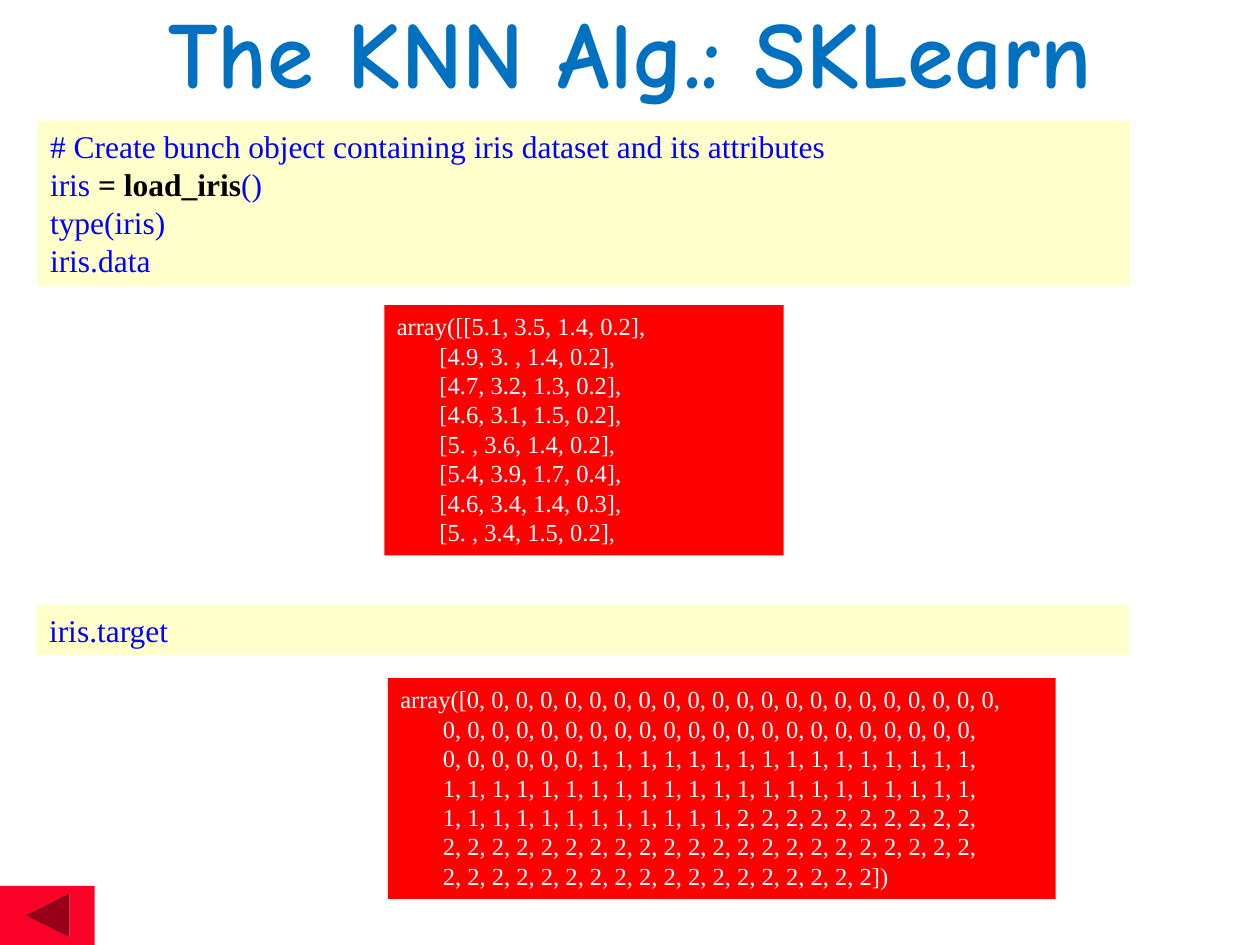
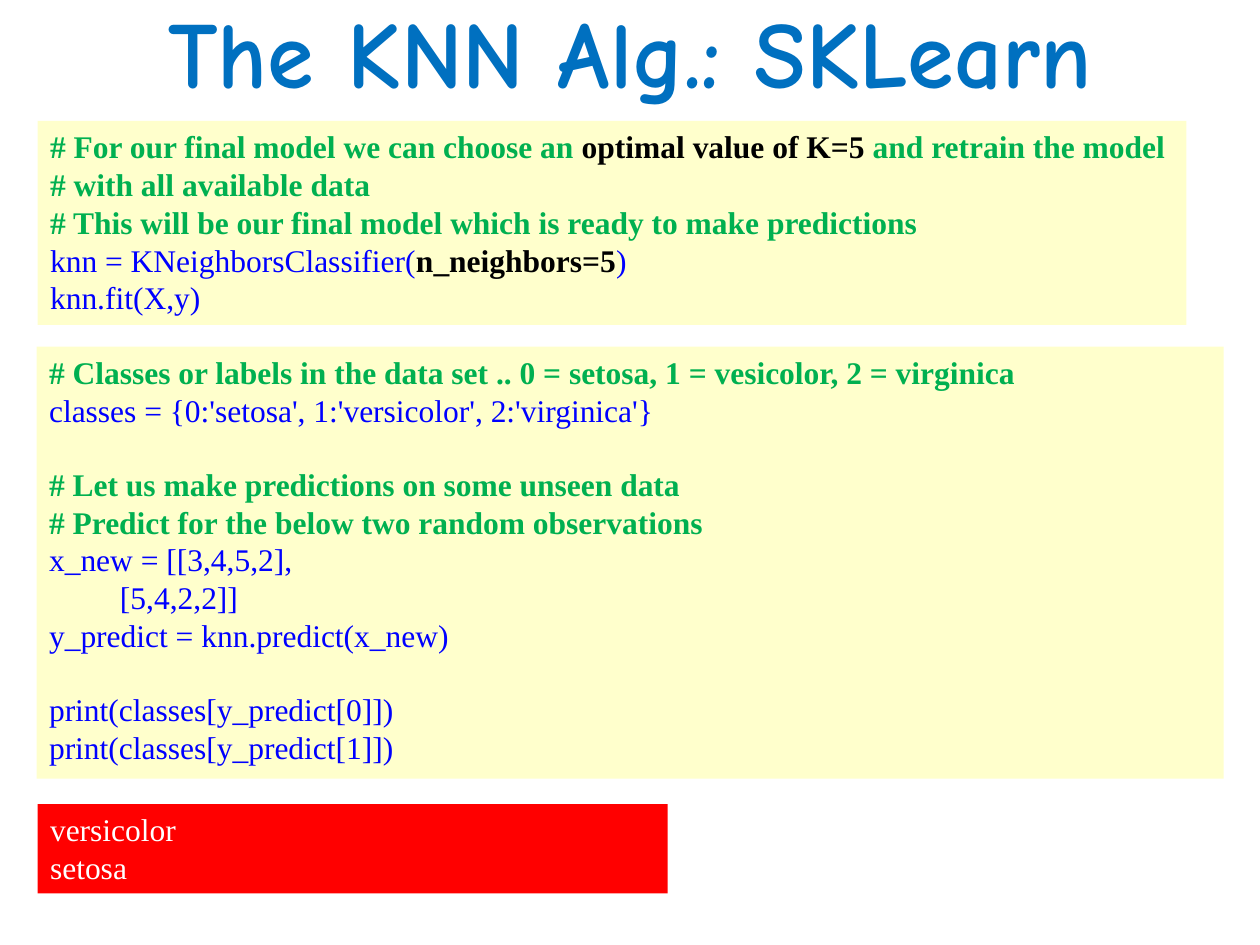
from dataclasses import dataclass
from pptx import Presentation
from pptx.dml.color import RGBColor
from pptx.enum.shapes import MSO_SHAPE as Preset
from pptx.enum.text import MSO_ANCHOR as Anchor, MSO_AUTO_SIZE as AutoSize, PP_ALIGN as Align
from pptx.util import Cm, Pt

TITLE_BLUE = RGBColor(0x00, 0x70, 0xC0)
CODE_BLUE = RGBColor(0x00, 0x00, 0xFF)
COMMENT_GREEN = RGBColor(0x00, 0xB0, 0x50)
BLACK = RGBColor(0x00, 0x00, 0x00)
WHITE = RGBColor(0xFF, 0xFF, 0xFF)
CODE_FILL = RGBColor(0xFF, 0xFF, 0xCC)
OUTPUT_FILL = RGBColor(0xFF, 0x00, 0x00)
BUTTON_RED = RGBColor(0xFC, 0x01, 0x28)

TITLE_FONT = "Comic Neue"
BODY_FONT = "Times New Roman"
TITLE_ONLY = 5
LINE_HEIGHT = 1.15

CODE = (CODE_BLUE, False)
COMMENT = (COMMENT_GREEN, True)
KEY = (BLACK, True)
OUTPUT = (WHITE, False)


@dataclass
class Line:
    segments: list
    indent: float = 0
    after_gap: bool = False


def code(text, **layout):
    return Line([(text, CODE)], **layout)


def comment(text, **layout):
    return Line([(text, COMMENT)], **layout)


def output(rows, indent=0):
    return [Line([(row, OUTPUT)], indent if number else 0) for number, row in enumerate(rows)]


class Deck:
    def __init__(self):
        self.presentation = Presentation()
        self.presentation.slide_width = Cm(25.4)
        self.presentation.slide_height = Cm(19.05)
        self.slide = None

    def start_slide(self, heading):
        layout = self.presentation.slide_layouts[TITLE_ONLY]
        self.slide = self.presentation.slides.add_slide(layout)
        title = self.slide.shapes.title
        title.left, title.top, title.width, title.height = Cm(0), Cm(0), Cm(25.4), Cm(2.06)
        frame = title.text_frame
        frame.text = heading
        frame.auto_size = AutoSize.NONE
        frame.vertical_anchor = Anchor.MIDDLE
        paragraph = frame.paragraphs[0]
        paragraph.alignment = Align.CENTER
        self.set_font(paragraph.font, TITLE_FONT, 54)
        self.set_style(paragraph.font, (TITLE_BLUE, True))

    def set_font(self, font, name, size):
        font.name = name
        font.size = Pt(size)

    def set_style(self, font, style):
        font.color.rgb, font.bold = style

    def block(self, preset, place, fill):
        shape = self.slide.shapes.add_shape(preset, *map(Cm, place))
        shape.shadow.inherit = False
        shape.fill.solid()
        shape.fill.fore_color.rgb = fill
        shape.line.fill.background()
        return shape

    def listing(self, place, lines, fill=CODE_FILL, size=18):
        frame = self.block(Preset.RECTANGLE, place, fill).text_frame
        frame.word_wrap = True
        frame.auto_size = AutoSize.SHAPE_TO_FIT_TEXT
        frame.vertical_anchor = Anchor.TOP
        for number, line in enumerate(lines):
            paragraph = frame.add_paragraph() if number else frame.paragraphs[0]
            self.write_line(paragraph, line, size)

    def write_line(self, paragraph, line, size):
        paragraph.alignment = Align.LEFT
        self.set_font(paragraph.font, BODY_FONT, size)
        if line.after_gap:
            paragraph.space_before = Pt(size * LINE_HEIGHT)
        if line.indent:
            paragraph._p.get_or_add_pPr().set("marL", str(Cm(line.indent)))
        for text, style in line.segments:
            run = paragraph.add_run()
            run.text = text
            self.set_style(paragraph.font if len(line.segments) == 1 else run.font, style)

    def back_button(self):
        self.block(Preset.ACTION_BUTTON_BACK_OR_PREVIOUS, (0, 17.86, 1.91, 1.19), BUTTON_RED)


def target_rows(per_row=22, per_class=50):
    labels = [str(label) for label in range(3) for _ in range(per_class)]
    rows = [", ".join(labels[start:start + per_row]) + ","
            for start in range(0, len(labels), per_row)]
    rows[0] = "array([" + rows[0]
    rows[-1] = rows[-1].rstrip(",") + "])"
    return rows


def dataset_slide(deck, heading):
    deck.start_slide(heading)
    deck.listing((0.76, 2.44, 22.02, 3.33), [
        code("# Create bunch object containing iris dataset and its attributes"),
        Line([("iris ", CODE), ("= load_iris", KEY), ("()", CODE)]),
        code("type(iris)"),
        code("iris.data"),
    ])
    measurements = [
        "array([[5.1, 3.5, 1.4, 0.2],",
        "[4.9, 3. , 1.4, 0.2],",
        "[4.7, 3.2, 1.3, 0.2],",
        "[4.6, 3.1, 1.5, 0.2],",
        "[5. , 3.6, 1.4, 0.2],",
        "[5.4, 3.9, 1.7, 0.4],",
        "[4.6, 3.4, 1.4, 0.3],",
        "[5. , 3.4, 1.5, 0.2],",
    ]
    deck.listing((7.75, 6.15, 8.05, 5.05), output(measurements, 0.86), OUTPUT_FILL, 14)
    deck.listing((0.74, 12.19, 22.02, 1.02), [code("iris.target")])
    deck.listing((7.82, 13.67, 13.46, 4.45), output(target_rows(), 0.86), OUTPUT_FILL, 14)
    deck.back_button()


def prediction_slide(deck, heading):
    deck.start_slide(heading)
    deck.listing((0.76, 2.44, 23.16, 4.11), [
        Line([("# For our final model we can choose an ", COMMENT),
              ("optimal value of K=5", KEY),
              (" and retrain the model", COMMENT)]),
        comment("# with all available data"),
        comment("# This will be our final model which is ready to make predictions"),
        Line([("knn = KNeighborsClassifier(", CODE), ("n_neighbors=5", KEY), (")", CODE)]),
        code("knn.fit(X,y)"),
    ])
    deck.listing((0.74, 6.99, 23.93, 8.71), [
        comment("# Classes or labels in the data set .. 0 = setosa, 1 = vesicolor, 2 = virginica"),
        code("classes = {0:'setosa', 1:'versicolor', 2:'virginica'}"),
        comment("# Let us make predictions on some unseen data", after_gap=True),
        comment("# Predict for the below two random observations"),
        code("x_new = [[3,4,5,2],"),
        code("[5,4,2,2]]", indent=1.43),
        code("y_predict = knn.predict(x_new)"),
        code("print(classes[y_predict[0]])", after_gap=True),
        code("print(classes[y_predict[1]])"),
    ])
    deck.listing((0.76, 16.21, 12.7, 1.8), output(["versicolor", "setosa"]), OUTPUT_FILL)


def main():
    deck = Deck()
    heading = "The KNN Alg.: SKLearn"
    dataset_slide(deck, heading)
    prediction_slide(deck, heading)
    deck.presentation.save("out.pptx")


if __name__ == "__main__":
    main()
